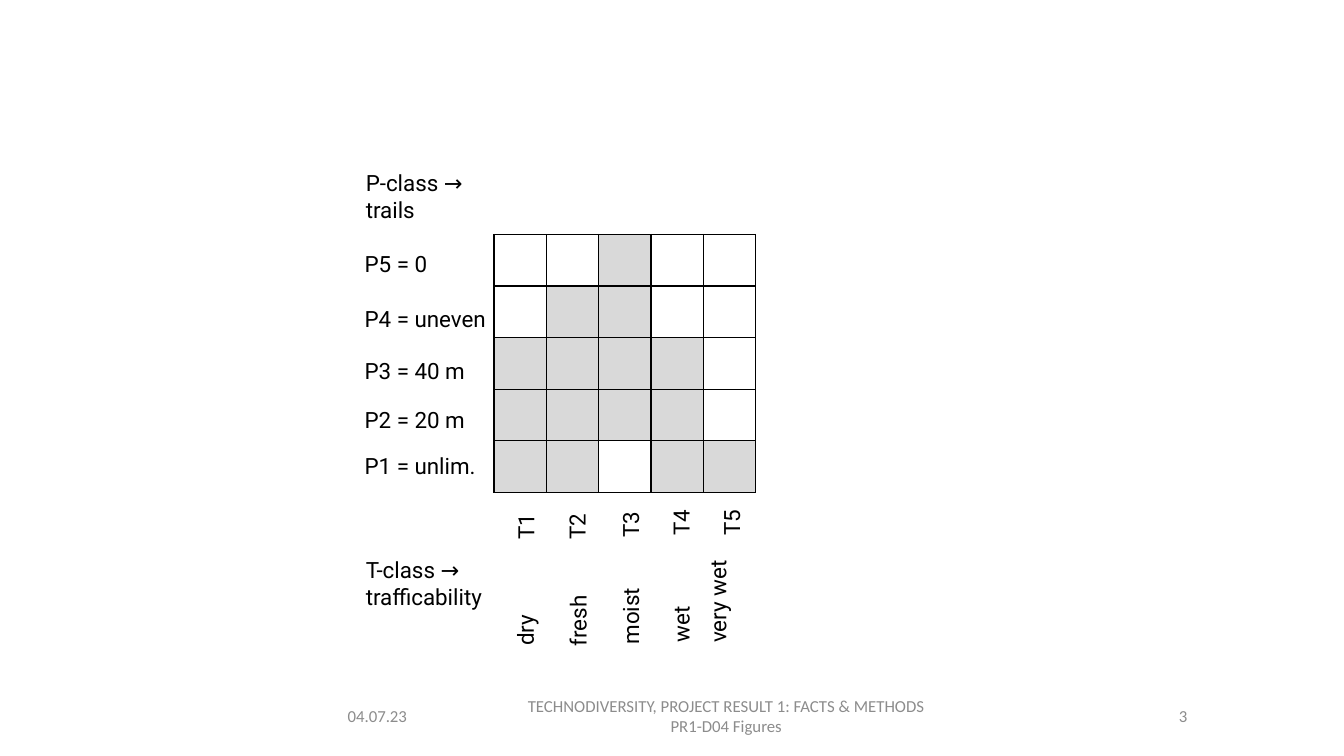
from lxml import etree
from pptx import Presentation
from pptx import util as u
from pptx.dml.color import RGBColor
from pptx.enum import text
from pptx.oxml import ns

BLACK = RGBColor(0x00, 0x00, 0x00)
WHITE = RGBColor(0xFF, 0xFF, 0xFF)
SHADE = RGBColor(0xD9, 0xD9, 0xD9)
GREY = RGBColor(0x8C, 0x8C, 0x8C)

LEFT, CENTER, RIGHT = text.PP_ALIGN.LEFT, text.PP_ALIGN.CENTER, text.PP_ALIGN.RIGHT

FOOTERS = [
    ("04.07.23", 241.2, 96.5, LEFT),
    ("TECHNODIVERSITY, PROJECT RESULT 1: FACTS & METHODS\nPR1-D04 Figures", 349.9, 337.7, CENTER),
    ("3", 703.4, 151.9, RIGHT),
]
AXIS_TITLES = [
    ("P-class → trails", 117.4, 88.6),
    ("T-class → trafficability", 393.8, 105.8),
]
P_CLASSES = [
    ("P5 = 0", 175, 101.5),
    ("P4 = uneven", 214.6, 104.4),
    ("P3 = 40 m", 251.3, 88.6),
    ("P2 = 20 m", 286.6, 88.6),
    ("P1 = unlim.", 319.7, 113.8),
]
T_CLASSES = [
    ("T1", 356.4, 360),
    ("T2", 393.1, 360),
    ("T3", 431.3, 358.6),
    ("T4", 467.3, 357.1),
    ("T5", 503.3, 357.1),
]
MOISTURE = [
    ("dry", 332.6, 412.6, 85, 26.6),
    ("fresh", 375.8, 418.3, 74.2, 26.6),
    ("moist", 413.3, 416.9, 74.2, 26.6),
    ("wet", 449.3, 415.4, 74.2, 26.6),
    ("very wet", 485.3, 406.1, 74.2, 46.1),
]
SUITABILITY = ["..#..", ".##..", "####.", "####.", "##.##"]


class Figure:
    """Draws the elements of the figure on one slide in a shared style."""

    def __init__(self, s):
        self.s = s

    def set_text(self, tf, words, font, size, color, align=LEFT):
        tf.text = words
        tf.word_wrap = True
        for p in tf.paragraphs:
            p.alignment = align
            for r in p.runs:
                r.font.name = font
                r.font.size = u.Pt(size)
                r.font.color.rgb = color

    def box(self, x, y, w, h):
        return self.s.shapes.add_textbox(u.Pt(x), u.Pt(y), u.Pt(w), u.Pt(h))

    def label(self, words, x, y, w, h=26.6, rotation=0):
        sp = self.box(x, y, w, h)
        sp.rotation = rotation
        self.set_text(sp.text_frame, words, "Roboto", 16, BLACK)
        sp.text_frame.auto_size = text.MSO_AUTO_SIZE.SHAPE_TO_FIT_TEXT

    def footer(self, words, x, w, align):
        tf = self.box(x, 496.8, w, 28.8).text_frame
        self.set_text(tf, words, "Calibri", 12, GREY, align)
        tf.vertical_anchor = text.MSO_ANCHOR.MIDDLE

    def border(self, cell):
        tc_pr = cell._tc.get_or_add_tcPr()
        for i, side in enumerate(("a:lnL", "a:lnR", "a:lnT", "a:lnB")):
            ln = etree.Element(ns.qn(side), w=str(u.Pt(1)))
            fill = etree.SubElement(ln, ns.qn("a:solidFill"))
            etree.SubElement(fill, ns.qn("a:srgbClr"), val=str(BLACK))
            tc_pr.insert(i, ln)

    def grid(self, rows, x, y, col_w, row_h):
        n, m = len(rows), len(rows[0])
        table = self.s.shapes.add_table(
            n, m, u.Pt(x), u.Pt(y), u.Pt(m * col_w), u.Pt(n * row_h)).table
        table.first_row = table.horz_banding = False
        for col in table.columns:
            col.width = u.Pt(col_w)
        for i, marks in enumerate(rows):
            table.rows[i].height = u.Pt(row_h)
            for j, mark in enumerate(marks):
                cell = table.cell(i, j)
                cell.fill.solid()
                cell.fill.fore_color.rgb = SHADE if mark == "#" else WHITE
                self.border(cell)


def main():
    prs = Presentation()
    prs.slide_width, prs.slide_height = u.Pt(960), u.Pt(540)
    fig = Figure(prs.slides.add_slide(prs.slide_layouts[6]))
    for footer in FOOTERS:
        fig.footer(*footer)
    for words, y, w in AXIS_TITLES:
        fig.label(words, 254.2, y, w, 46.1)
    for words, y, w in P_CLASSES:
        fig.label(words, 253.4, y, w)
    for words, x, y in T_CLASSES:
        fig.label(words, x, y, 38.2, rotation=270)
    for moisture in MOISTURE:
        fig.label(*moisture, rotation=270)
    fig.grid(SUITABILITY, 352.8, 167.4, 37.44, 36.9)
    prs.save("out.pptx")


if __name__ == "__main__":
    main()
